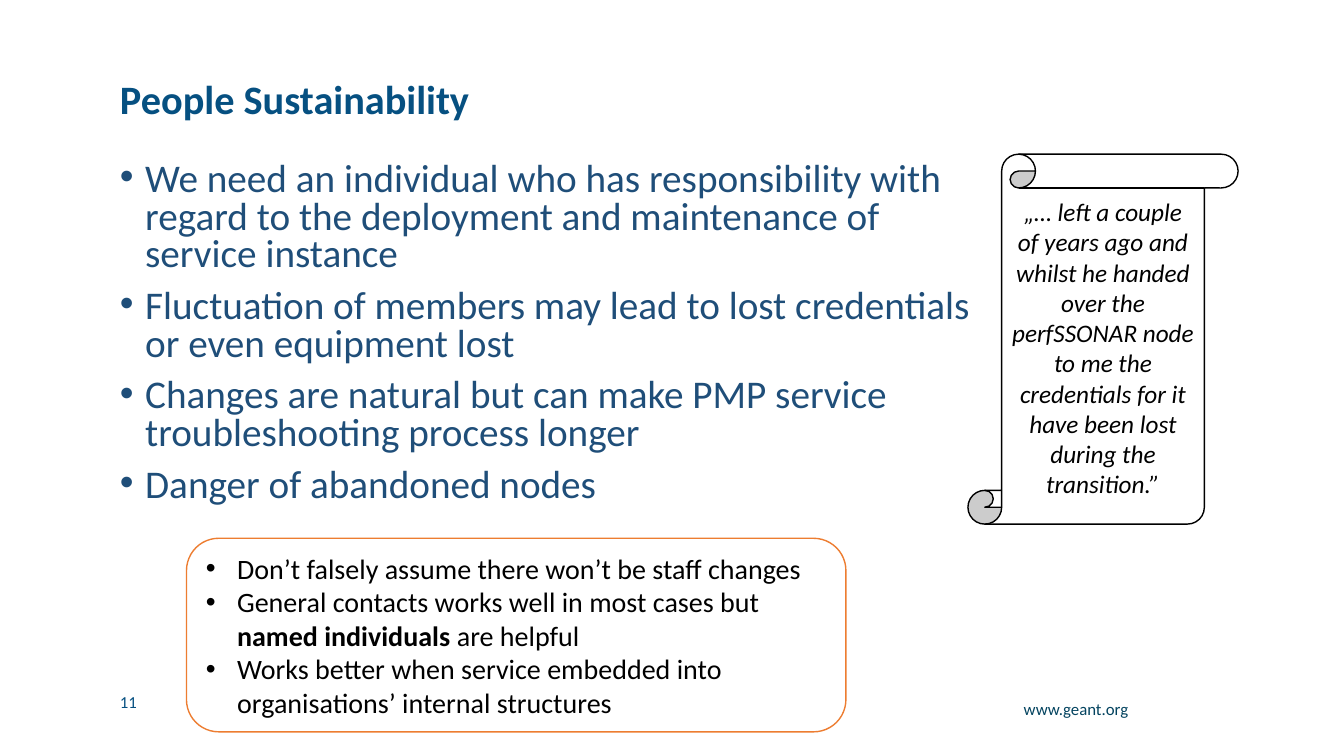
from typing import NamedTuple

from lxml.etree import SubElement
from pptx import Presentation
from pptx.dml.color import RGBColor
from pptx.enum.shapes import MSO_SHAPE as Form
from pptx.enum.text import MSO_ANCHOR as Anchor, MSO_AUTO_SIZE as Fit, PP_ALIGN as Align
from pptx.oxml.ns import qn
from pptx.util import Emu, Pt

PX = 9144  # 100 px to the inch
FONT = "Calibri"
COLORS = {
    "title": "065081",
    "body": "1F4E79",
    "foot": "03435F",
    "ink": "000000",
    "paper": "FFFFFF",
    "frame": "ED7D31",
}


class Box(NamedTuple):
    left: int
    top: int
    width: int
    height: int


class Run(NamedTuple):
    text: str
    bold: bool = False


class Style(NamedTuple):
    size: float
    color: str
    bold: bool = False
    italic: bool = False
    align: Align = Align.LEFT
    anchor: Anchor = Anchor.TOP
    leading: float = 1.0
    gap: int = 0
    indent: int = 0


class Card(NamedTuple):
    form: Form
    box: Box
    line: str
    style: Style
    lines: list[list[Run]]


class Label(NamedTuple):
    box: Box
    style: Style
    text: str


TITLE = Style(28.8, "title", bold=True, anchor=Anchor.MIDDLE, leading=0.9)
BODY = Style(28, "body", leading=0.8, gap=10, indent=25)
ADVICE = Style(20, "ink", anchor=Anchor.MIDDLE, indent=31)
QUOTE = Style(18, "ink", italic=True, align=Align.CENTER, anchor=Anchor.MIDDLE)

POINTS = [
    "We need an individual who has responsibility with regard to the deployment "
    "and maintenance of service instance",
    "Fluctuation of members may lead to lost credentials or even equipment lost",
    "Changes are natural but can make PMP service troubleshooting process longer",
    "Danger of abandoned nodes",
]

CARDS = [
    Card(Form.ROUNDED_RECTANGLE, Box(185, 534, 654, 192), "frame", ADVICE, [
        [Run("Don’t falsely assume there won’t be staff changes")],
        [Run("General contacts works well in most cases but "),
         Run("named individuals ", bold=True), Run("are helpful")],
        [Run("Works better when service embedded into "
             "organisations’ internal structures")],
    ]),
    Card(Form.VERTICAL_SCROLL, Box(960, 153, 268, 367), "ink", QUOTE, [
        [Run("„… left a couple of years ago and whilst he handed over the "
             "perfSSONAR node to me the credentials for it have been lost "
             "during the transition.”")],
    ]),
]

LABELS = [
    Label(Box(109, 681, 145, 30), Style(12, "title"), "11"),
    Label(Box(961, 691, 168, 37),
          Style(12, "foot", align=Align.RIGHT, leading=0.9), "www.geant.org"),
]


def px(count: int) -> Emu:
    return Emu(count * PX)


def paint(name: str) -> RGBColor:
    return RGBColor.from_string(COLORS[name])


def place(shape, box: Box) -> None:
    shape.left, shape.top, shape.width, shape.height = map(px, box)


def bullet(para, indent: int) -> None:
    """Give the paragraph a round bullet with a hanging indent."""
    props = para._p.get_or_add_pPr()
    props.set("marL", str(px(indent)))
    props.set("indent", str(px(-indent)))
    SubElement(props, qn("a:buFont")).set("typeface", "Arial")
    SubElement(props, qn("a:buChar")).set("char", "•")


def write(frame, style: Style, lines: list[list[Run]]) -> None:
    frame.word_wrap = True
    frame.auto_size = Fit.NONE
    frame.vertical_anchor = style.anchor
    for row, runs in enumerate(lines):
        para = frame.add_paragraph() if row else frame.paragraphs[0]
        if style.indent:
            bullet(para, style.indent)
        para.alignment = style.align
        para.line_spacing = style.leading
        para.space_before = Pt(style.gap if row else 0)
        for part in runs:
            run = para.add_run()
            run.text = part.text
            font = run.font
            font.name, font.size = FONT, Pt(style.size)
            font.bold = style.bold or part.bold
            font.italic = style.italic
            font.color.rgb = paint(style.color)


def draw_card(slide, card: Card) -> None:
    shape = slide.shapes.add_shape(card.form, *map(px, card.box))
    shape.shadow.inherit = False
    shape.fill.solid()
    shape.fill.fore_color.rgb = paint("paper")
    shape.line.color.rgb = paint(card.line)
    shape.line.width = Pt(1)
    write(shape.text_frame, card.style, card.lines)


def draw_label(slide, label: Label) -> None:
    shape = slide.shapes.add_textbox(*map(px, label.box))
    write(shape.text_frame, label.style, [[Run(label.text)]])


def main() -> None:
    deck = Presentation()
    deck.slide_width, deck.slide_height = px(1333), px(750)
    slide = deck.slides.add_slide(deck.slide_layouts[1])

    title, body = slide.shapes.title, slide.placeholders[1]
    place(title, Box(109, 77, 1082, 47))
    write(title.text_frame, TITLE, [[Run("People Sustainability")]])
    place(body, Box(109, 156, 871, 377))
    write(body.text_frame, BODY, [[Run(point)] for point in POINTS])

    for label in LABELS:
        draw_label(slide, label)
    for card in CARDS:
        draw_card(slide, card)
    deck.save("out.pptx")


if __name__ == "__main__":
    main()
